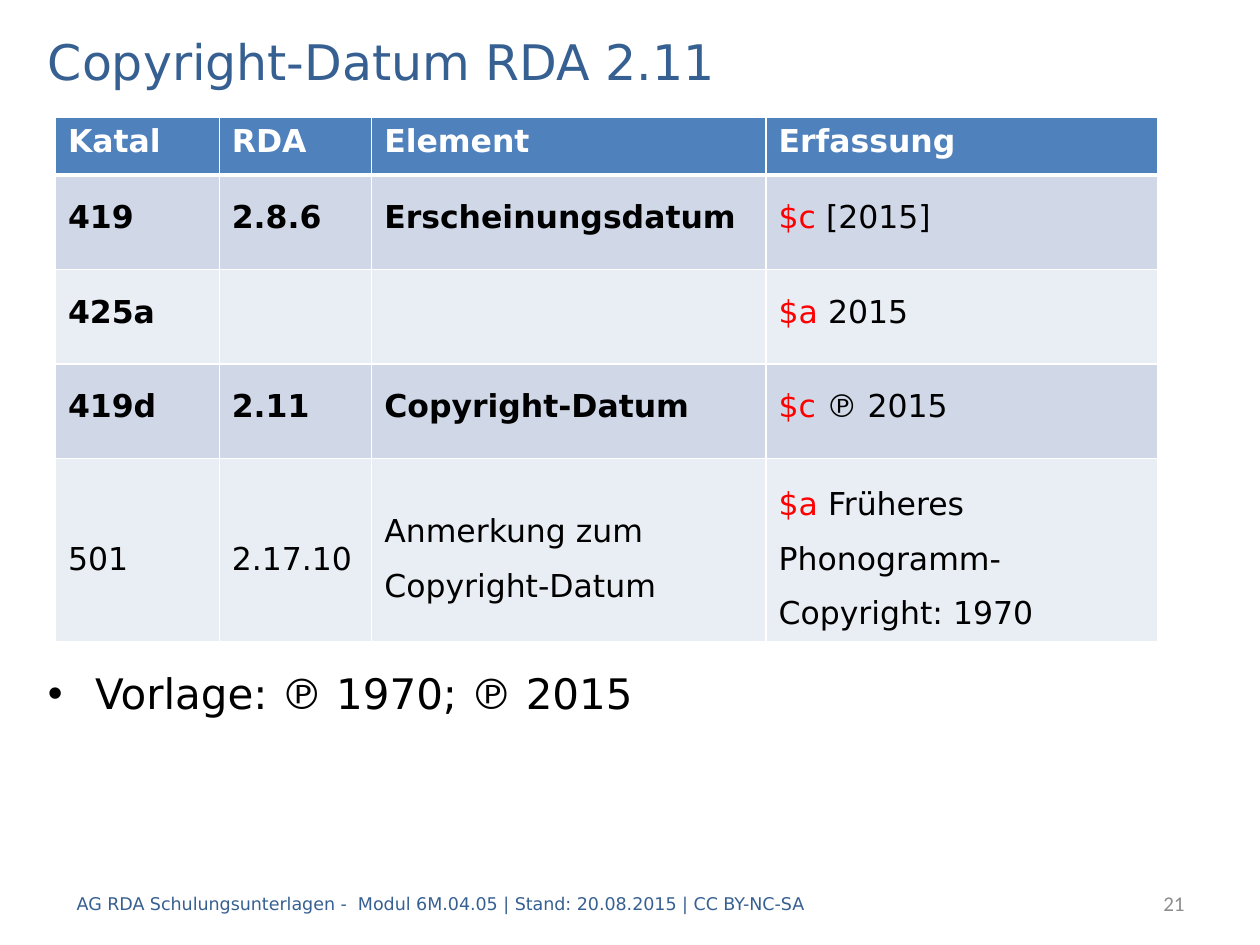
import pptx
import pptx.dml.color
import pptx.enum.text
import pptx.oxml
import pptx.oxml.ns
import pptx.util

Inches = pptx.util.Inches
Pt = pptx.util.Pt
RGBColor = pptx.dml.color.RGBColor
ALIGN = pptx.enum.text.PP_ALIGN
MIDDLE = pptx.enum.text.MSO_ANCHOR.MIDDLE

NAVY = RGBColor(0x37, 0x60, 0x92)
BLUE = RGBColor(0x4F, 0x81, 0xBD)
BAND_DARK = RGBColor(0xD0, 0xD8, 0xE8)
BAND_LIGHT = RGBColor(0xE9, 0xED, 0xF4)
WHITE = RGBColor(0xFF, 0xFF, 0xFF)
BLACK = RGBColor(0, 0, 0)
RED = RGBColor(0xFF, 0, 0)
GREY = RGBColor(0x8C, 0x8C, 0x8C)
FONT = "DejaVu Sans"

COLUMNS = [1.3, 1.21, 3.13, 3.11]
ROWS = [0.46] + [0.75] * 4
HEADER = ["Katal", "RDA", "Element", "Erfassung"]
# Field, rule, element, subfield code, recorded value
ENTRIES = [
    ("419", "2.8.6", "Erscheinungsdatum", "$c ", "[2015]"),
    ("425a", "", "", "$a ", "2015"),
    ("419d", "2.11", "Copyright-Datum", "$c ", "℗ 2015"),
    ("501", "2.17.10", "Anmerkung zum Copyright-Datum", "$a ",
     "Früheres Phonogramm-Copyright: 1970"),
]


def add_span(para, text, size, color, bold=False, font=FONT):
    span = para.add_run()
    span.text = text
    span.font.size = Pt(size)
    span.font.name = font
    span.font.bold = bold
    span.font.color.rgb = color


def place(shape, left, top, width, height):
    shape.left, shape.top = Inches(left), Inches(top)
    shape.width, shape.height = Inches(width), Inches(height)


def fill_placeholder(box, frame, text, size, color):
    place(box, *frame)
    box.text_frame.auto_size = pptx.enum.text.MSO_AUTO_SIZE.NONE
    para = box.text_frame.paragraphs[0]
    para.alignment = ALIGN.LEFT
    add_span(para, text, size, color)
    return para


def add_footer(page, left, width, text, size, color, font, align):
    box = page.shapes.add_textbox(
        Inches(left), Inches(6.97), Inches(width), Inches(0.4))
    box.text_frame.word_wrap = True
    box.text_frame.vertical_anchor = MIDDLE
    para = box.text_frame.paragraphs[0]
    para.alignment = align
    add_span(para, text, size, color, font=font)


def style_cell(cell, fill, bottom=1):
    cell.fill.solid()
    cell.fill.fore_color.rgb = fill
    # Borders come before the fill in the cell properties
    properties = cell._tc.get_or_add_tcPr()
    widths = {"lnL": 1, "lnR": 1, "lnT": 1, "lnB": bottom}
    for position, (side, width) in enumerate(widths.items()):
        properties.insert(position, pptx.oxml.parse_xml(
            f'<a:{side} {pptx.oxml.ns.nsdecls("a")} w="{Pt(width)}">'
            f'<a:solidFill><a:srgbClr val="{WHITE}"/></a:solidFill></a:{side}>'))


def fill_body_cell(cell, spans, spacing, bold):
    cell.vertical_anchor = MIDDLE
    para = cell.text_frame.paragraphs[0]
    para.line_spacing = spacing
    para.space_before = para.space_after = Pt(6)
    for text, color in spans:
        add_span(para, text, 18, color, bold)


def add_field_table(page):
    table = page.shapes.add_table(
        len(ROWS), len(COLUMNS), Inches(0.44), Inches(0.93),
        Inches(sum(COLUMNS)), Inches(sum(ROWS))).table
    for column, width in zip(table.columns, COLUMNS):
        column.width = Inches(width)
    for row, height in zip(table.rows, ROWS):
        row.height = Inches(height)

    # Header row
    for index, label in enumerate(HEADER):
        cell = table.cell(0, index)
        style_cell(cell, BLUE, bottom=3)
        add_span(cell.text_frame.paragraphs[0], label, 18, WHITE, True)

    # Entries: the closing note is plain and widely spaced
    for number, (*labels, code, value) in enumerate(ENTRIES, start=1):
        is_note = number == len(ENTRIES)
        spacing = 1.5 if is_note else Pt(16)
        contents = [[(label, BLACK)] if label else [] for label in labels]
        contents.append([(code, RED), (value, BLACK)])
        for index, spans in enumerate(contents):
            cell = table.cell(number, index)
            style_cell(cell, BAND_DARK if number % 2 else BAND_LIGHT)
            if spans:
                bold = not is_note and index < len(labels)
                fill_body_cell(cell, spans, spacing, bold)


def main():
    deck = pptx.Presentation()
    deck.slide_width, deck.slide_height = Inches(10), Inches(7.5)
    page = deck.slides.add_slide(deck.slide_layouts[1])

    # Title and list
    title, body = page.placeholders
    fill_placeholder(title, (0.28, 0.2, 9.45, 0.56),
                     "Copyright-Datum RDA 2.11", 28, NAVY)
    title.text_frame.vertical_anchor = MIDDLE
    item = fill_placeholder(body, (0.28, 5.25, 9.45, 1.34),
                            "Vorlage: ℗ 1970; ℗ 2015", 24, BLACK)
    item.space_before = Pt(5)

    # Footer and page number
    add_footer(page, 0.51, 8.35,
               "AG RDA Schulungsunterlagen -  Modul 6M.04.05 | "
               "Stand: 20.08.2015 | CC BY-NC-SA", 10, NAVY, FONT, ALIGN.LEFT)
    add_footer(page, 7.91, 1.59, "21", 12, GREY, "Calibri", ALIGN.RIGHT)

    add_field_table(page)
    deck.save("out.pptx")


if __name__ == "__main__":
    main()
